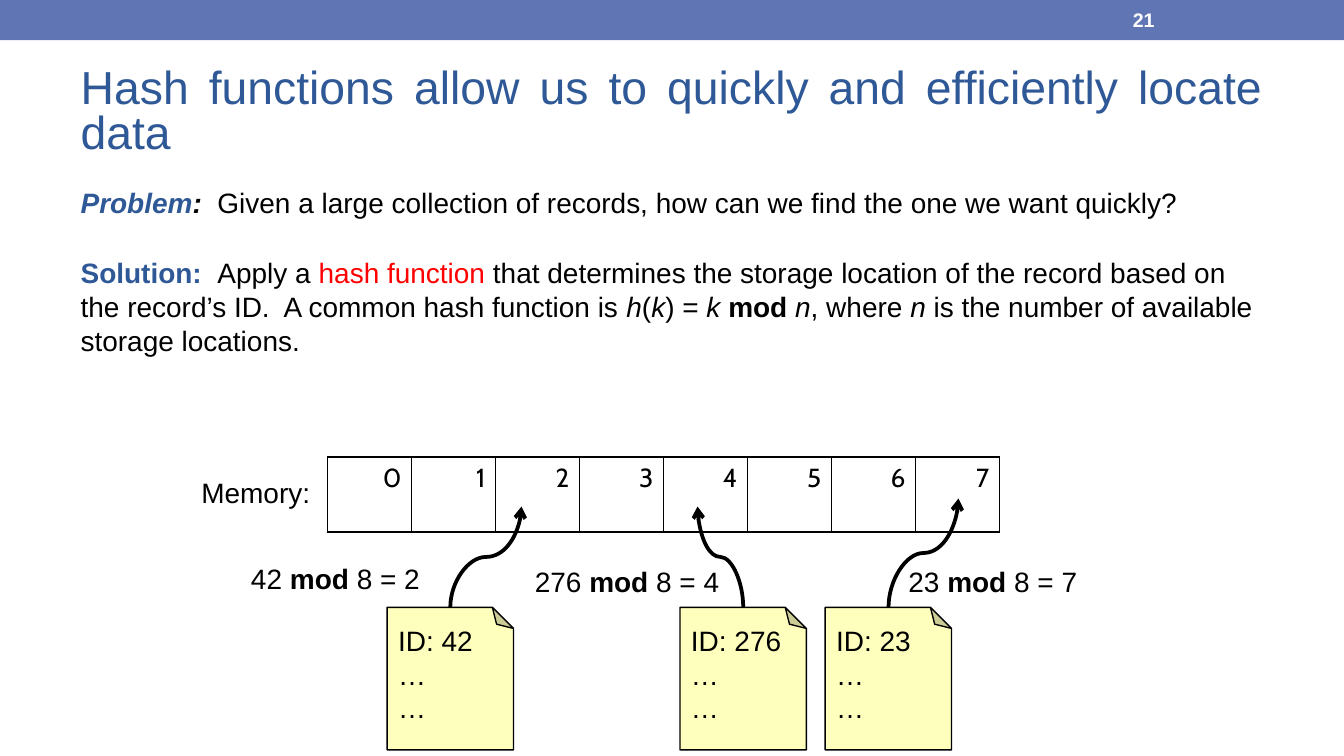
from lxml import etree
from pptx import Presentation
from pptx.dml.color import RGBColor
from pptx.enum import shapes, text
from pptx.oxml.ns import qn
from pptx.util import Pt

BLACK = "000000"
BLUE = "2F5897"
BODY_SIZE = 15
NOTE_TOP = 325.4
NOTE_WIDTH = 67.7


def colour(value):
    return RGBColor.from_string(value)


def add_span(para, content, size=BODY_SIZE, fill=BLACK, bold=False, italic=False, font="Arial"):
    span = para.add_run()
    span.text = content
    span.font.name = font
    span.font.size = Pt(size)
    span.font.bold = bold
    span.font.italic = italic
    span.font.color.rgb = colour(fill)


def place(box, left, top, width, height):
    box.left, box.top, box.width, box.height = (Pt(n) for n in (left, top, width, height))


def add_title(page):
    title = page.shapes.title
    place(title, 36, 31.7, 648, 58.3)
    frame = title.text_frame
    frame.auto_size = text.MSO_AUTO_SIZE.NONE
    frame.vertical_anchor = text.MSO_ANCHOR.MIDDLE
    para = frame.paragraphs[0]
    para.alignment = text.PP_ALIGN.JUSTIFY
    para.line_spacing = 0.8
    add_span(para, "Hash functions allow us to quickly and efficiently locate data", size=24.8, fill=BLUE)


def add_body(page, paragraphs):
    body = page.placeholders[1]
    place(body, 36, 92.9, 648, 144)
    frame = body.text_frame
    frame.auto_size = text.MSO_AUTO_SIZE.NONE
    frame.margin_top = Pt(6.5)
    for index, spans in enumerate(paragraphs):
        para = frame.add_paragraph() if index else frame.paragraphs[0]
        properties = para._p.get_or_add_pPr()
        properties.set("marL", "0")
        properties.set("indent", "0")
        para.space_before = Pt(19.7 if index else 0)
        etree.SubElement(properties, qn("a:buNone"))
        for content, style in spans:
            add_span(para, content, **style)


def add_label(parent, left, top, width, height, lines, wrap=False, **style):
    box = parent.shapes.add_textbox(Pt(left), Pt(top), Pt(width), Pt(height))
    frame = box.text_frame
    frame.word_wrap = wrap
    for index, spans in enumerate(lines):
        para = frame.add_paragraph() if index else frame.paragraphs[0]
        for content, bold in spans:
            add_span(para, content, bold=bold, **style)
    return box


def add_filled(parent, kind, left, top, width, height, fill):
    shape = parent.shapes.add_shape(kind, Pt(left), Pt(top), Pt(width), Pt(height))
    shape.shadow.inherit = False
    shape.fill.solid()
    shape.fill.fore_color.rgb = colour(fill)
    shape.line.fill.background()
    return shape


def add_note(page, left, key, label_width):
    group = page.shapes.add_group_shape()
    sheet = add_filled(group, shapes.MSO_SHAPE.FOLDED_CORNER, left, NOTE_TOP, NOTE_WIDTH, 76.4, "FFFFBD")
    sheet.line.color.rgb = colour(BLACK)
    sheet.line.width = Pt(0.75)
    sheet._element.spPr.xfrm.set("flipV", "1")
    lines = [[(line, False)] for line in (f"ID: {key}", "…", "…")]
    add_label(group, left - 1.2, 330.5, label_width, 61.9, lines)


def add_curve(page, start_x, end_x, end_y):
    rise, run = NOTE_TOP - end_y, abs(end_x - start_x)
    middle_x, middle_y = (start_x + end_x) / 2, (NOTE_TOP + end_y) / 2
    side = 1 if end_x > start_x else -1
    curve = page.shapes.add_connector(
        shapes.MSO_CONNECTOR.CURVE,
        Pt(middle_x + side * rise / 2), Pt(middle_y + run / 2),
        Pt(middle_x - side * rise / 2), Pt(middle_y - run / 2),
    )
    curve.line.color.rgb = colour(BLACK)
    curve.line.width = Pt(2)
    properties = curve._element.spPr
    properties.find(qn("a:xfrm")).set("rot", "5400000" if side > 0 else "16200000")
    etree.SubElement(properties.find(qn("a:ln")), qn("a:tailEnd"), type="arrow")
    etree.SubElement(properties, qn("a:effectLst"))


def add_borders(cell):
    properties = cell._tc.get_or_add_tcPr()
    for side in ("lnL", "lnR", "lnT", "lnB"):
        line = etree.SubElement(properties, qn(f"a:{side}"), w=str(Pt(1)))
        fill = etree.SubElement(line, qn("a:solidFill"))
        etree.SubElement(fill, qn("a:srgbClr"), val=BLACK)


def add_memory(page, count):
    table = page.shapes.add_table(1, count, Pt(175.5), Pt(244.8), Pt(360), Pt(40.3)).table
    table.first_row = False
    table.horz_banding = False
    for index, cell in enumerate(table.rows[0].cells):
        table.columns[index].width = Pt(360 / count)
        add_borders(cell)
        cell.fill.background()
        cell.margin_left = cell.margin_right = Pt(5.4)
        cell.margin_top = cell.margin_bottom = Pt(2.7)
        para = cell.text_frame.paragraphs[0]
        para.alignment = text.PP_ALIGN.RIGHT
        add_span(para, str(index), size=14, font="Cabin")


def main():
    deck = Presentation()
    deck.slide_width, deck.slide_height = Pt(720), Pt(405)
    page = deck.slides.add_slide(deck.slide_layouts[1])

    add_filled(page, shapes.MSO_SHAPE.RECTANGLE, 0, 0, 720, 21.6, "6076B4")
    add_title(page)
    italic, bold = {"italic": True}, {"bold": True}
    add_body(page, [
        [
            ("Problem", {"fill": BLUE, "bold": True, "italic": True}),
            (":", {"bold": True, "italic": True}),
            ("  Given a large collection of records, how can we find the one we want quickly?", {}),
        ],
        [
            ("Solution:  ", {"fill": BLUE, "bold": True}),
            ("Apply a ", {}),
            ("hash function ", {"fill": "FF0000"}),
            ("that determines the storage location of the record based on the record’s ID.  "
             "A common hash function is ", {}),
            ("h", italic), ("(", {}), ("k", italic), (") = ", {}), ("k ", italic),
            ("mod ", bold), ("n", italic), (", where ", {}), ("n", italic),
            (" is the number of available storage locations.", {}),
        ],
    ])

    slots = 8
    add_memory(page, slots)
    add_label(page, 100.8, 251.3, 73.4, 25.2, [[("Memory:", False)]])
    records = [
        (42, 207.4, 54.7, 279.4, 271.4, 127.4, 297.4, 105.8),
        (276, 364.3, 63.4, 373.7, 271.4, 279.4, 298.8, 114.5),
        (23, 442.1, 54.7, 513.4, 267.1, 479.5, 298.8, 115.9),
    ]
    for key, left, label_width, tip_x, tip_y, sum_left, sum_top, sum_width in records:
        add_note(page, left, key, label_width)
        add_curve(page, left + NOTE_WIDTH / 2, tip_x, tip_y)
        spans = [(f"{key} ", False), ("mod", True), (f" {slots} = {key % slots}", False)]
        add_label(page, sum_left, sum_top, sum_width, 25.2, [spans])

    number = add_label(page, 599.8, 0.7, 84.2, 19.4, [[("21", True)]], wrap=True, size=10.5, fill="FFFFFF")
    number.text_frame.vertical_anchor = text.MSO_ANCHOR.MIDDLE
    deck.save("out.pptx")


if __name__ == "__main__":
    main()
